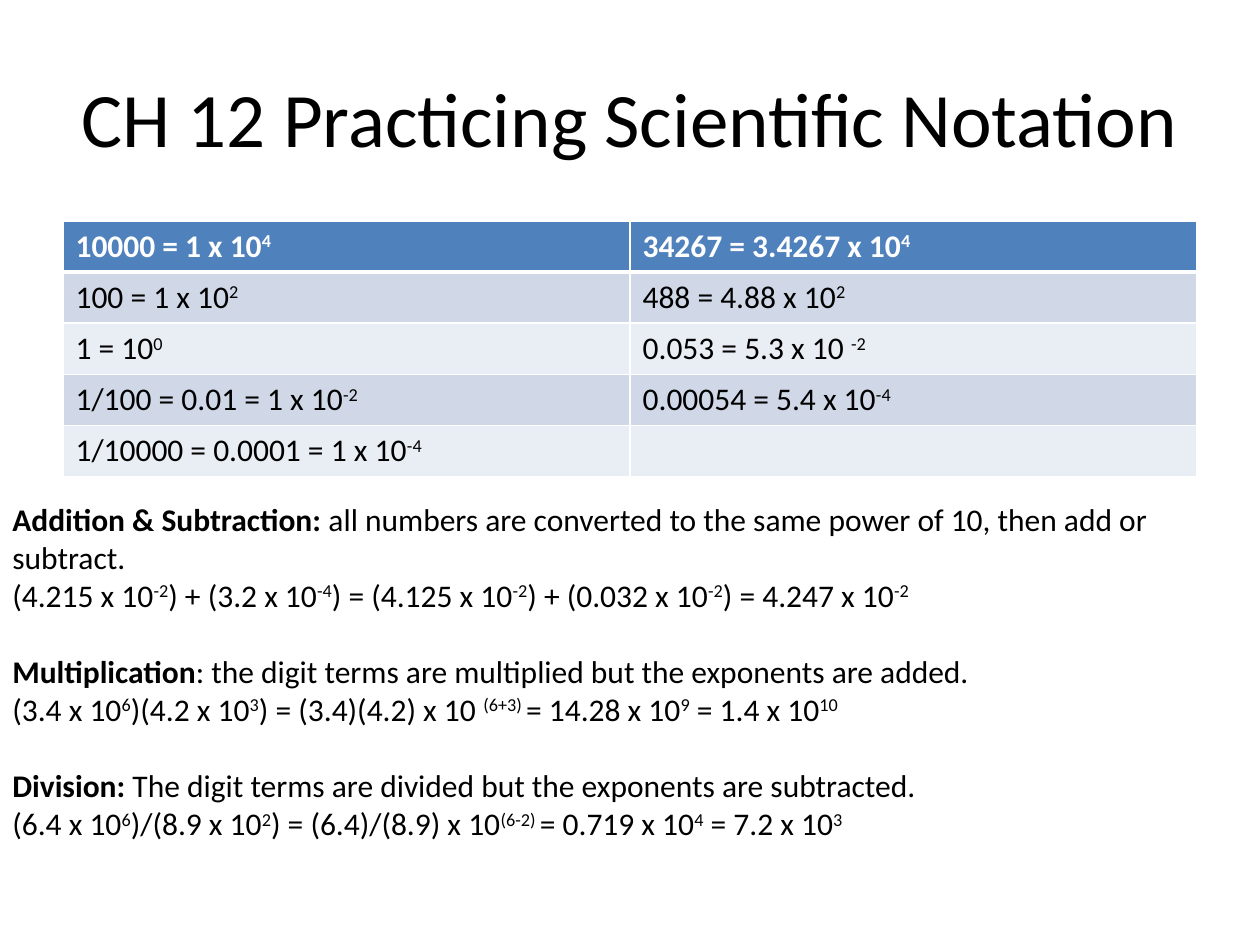
import dataclasses

import pptx
import pptx.dml.color
import pptx.enum.text
import pptx.oxml
import pptx.oxml.ns
import pptx.util

SCALE = 914400 / 126


@dataclasses.dataclass(frozen=True)
class Theme:
    font: str = "Calibri"
    title_size: int = 44
    body_size: int = 18
    section_gap: int = 22
    text: str = "000000"
    white: str = "FFFFFF"
    header: str = "4F81BD"
    bands: tuple = ("D0D8E8", "E9EDF4")


THEME = Theme()
TITLE = "CH 12 Practicing Scientific Notation"
ROWS = [
    ("10000 = 1 x 10^4", "34267 = 3.4267 x 10^4"),
    ("100 = 1 x 10^2", "488 = 4.88 x 10^2"),
    ("1 = 10^0", "0.053 = 5.3 x 10 ^-2"),
    ("1/100 = 0.01 = 1 x 10^-2", "0.00054 = 5.4 x 10^-4"),
    ("1/10000 = 0.0001 = 1 x 10^-4", ""),
]
RULES = [
    ("Addition & Subtraction:",
     " all numbers are converted to the same power of 10, then add or subtract.",
     "(4.215 x 10^-2^) + (3.2 x 10^-4^) = (4.125 x 10^-2^) + (0.032 x 10^-2^) = 4.247 x 10^-2"),
    ("Multiplication",
     ": the digit terms are multiplied but the exponents are added.",
     "(3.4 x 10^6^)(4.2 x 10^3^) = (3.4)(4.2) x 10 ^(6+3) ^= 14.28 x 10^9^ = 1.4 x 10^10"),
    ("Division:",
     " The digit terms are divided but the exponents are subtracted.",
     "(6.4 x 10^6^)/(8.9 x 10^2^) = (6.4)/(8.9) x 10^(6-2) ^= 0.719 x 10^4^ = 7.2 x 10^3"),
]


def px(n):
    return pptx.util.Emu(round(n * SCALE))


def rgb(color):
    return pptx.dml.color.RGBColor.from_string(color)


def style(p, size, color=THEME.text, bold=False):
    p.font.name = THEME.font
    p.font.size = pptx.util.Pt(size)
    p.font.bold = bold
    p.font.color.rgb = rgb(color)


def add_math(p, text):
    for i, part in enumerate(text.split("^")):
        if part:
            r = p.add_run()
            r.text = part
            if i % 2:
                r._r.get_or_add_rPr().set("baseline", "30000")


def set_borders(cell, bottom):
    tc_pr = cell._tc.get_or_add_tcPr()
    for side, width in (("L", 1), ("R", 1), ("T", 1), ("B", bottom)):
        tc_pr.append(pptx.oxml.parse_xml(
            f'<a:ln{side} {pptx.oxml.ns.nsdecls("a")} w="{pptx.util.Pt(width)}">'
            f'<a:solidFill><a:srgbClr val="{THEME.white}"/></a:solidFill></a:ln{side}>'))


def add_title(s):
    sp = s.shapes.title
    sp.left, sp.top, sp.width, sp.height = px(63), px(38), px(1134), px(158)
    tf = sp.text_frame
    tf.text = TITLE
    tf.vertical_anchor = pptx.enum.text.MSO_ANCHOR.MIDDLE
    p = tf.paragraphs[0]
    p.alignment = pptx.enum.text.PP_ALIGN.CENTER
    style(p, THEME.title_size)


def add_notation_table(s):
    row_height = 51
    table = s.shapes.add_table(len(ROWS), 2, px(63), px(221), px(1134),
                               px(row_height * len(ROWS))).table
    for i, row in enumerate(ROWS):
        is_header = i == 0
        fill = THEME.header if is_header else THEME.bands[(i - 1) % 2]
        for j, text in enumerate(row):
            cell = table.cell(i, j)
            set_borders(cell, 3 if is_header else 1)
            cell.fill.solid()
            cell.fill.fore_color.rgb = rgb(fill)
            p = cell.text_frame.paragraphs[0]
            style(p, THEME.body_size, THEME.white if is_header else THEME.text, is_header)
            add_math(p, text)


def add_rules(s):
    tf = s.shapes.add_textbox(px(0), px(494), px(1260), px(357)).text_frame
    tf.word_wrap = True
    tf.auto_size = pptx.enum.text.MSO_AUTO_SIZE.SHAPE_TO_FIT_TEXT
    for i, (name, rule, example) in enumerate(RULES):
        p = tf.add_paragraph() if i else tf.paragraphs[0]
        style(p, THEME.body_size)
        if i:
            p.space_before = pptx.util.Pt(THEME.section_gap)
        r = p.add_run()
        r.text = name
        r.font.bold = True
        p.add_run().text = rule
        p = tf.add_paragraph()
        style(p, THEME.body_size)
        add_math(p, example)


def main():
    prs = pptx.Presentation()
    prs.slide_width, prs.slide_height = px(1260), px(945)
    s = prs.slides.add_slide(prs.slide_layouts[5])
    add_title(s)
    add_notation_table(s)
    add_rules(s)
    prs.save("out.pptx")


if __name__ == "__main__":
    main()
